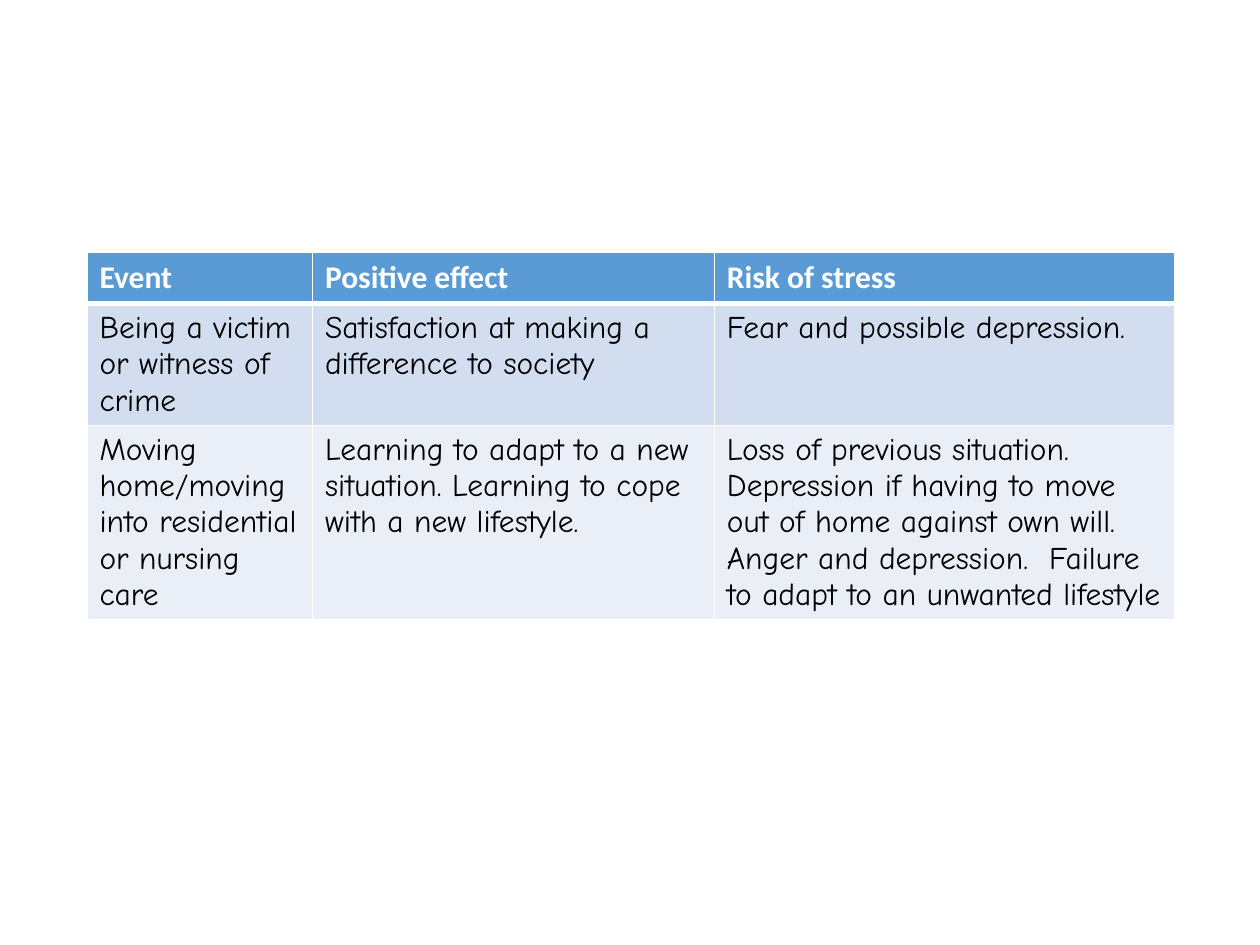
from lxml import etree
from pptx import Presentation, util as u
from pptx.dml.color import RGBColor
from pptx.oxml.ns import qn

HEADER_FORMAT = {"size": u.Pt(18), "name": "Calibri", "bold": True}
BODY_FORMAT = {"size": u.Pt(18), "name": "Comic Neue", "bold": False}
ROW_FILLS = ["5B9BD5", "D2DEEF", "EAEFF7"]
COLUMN_WIDTHS = [1.79, 3.19, 3.65]
EVENTS = [
    ["Event", "Positive effect", "Risk of stress"],
    ["Being a victim or witness of crime",
     "Satisfaction at making a difference to society",
     "Fear and possible depression."],
    ["Moving home/moving into residential or nursing care",
     "Learning to adapt to a new situation. Learning to cope with a new lifestyle.",
     "Loss of previous situation. Depression if having to move out of home against own will.\n"
     "Anger and depression.  Failure to adapt to an unwanted lifestyle"],
]


def paint(color_format, hex_color):
    """Fill a fill format with a solid colour."""
    color_format.solid()
    color_format.fore_color.rgb = RGBColor.from_string(hex_color)


def add_borders(cell, widths, hex_color="FFFFFF"):
    """Give the cell solid borders, with widths in points keyed by side."""
    properties = cell._tc.get_or_add_tcPr()
    for position, (side, width) in enumerate(widths.items()):
        border = etree.Element(qn(f"a:ln{side}"), w=str(u.Pt(width)))
        solid = etree.SubElement(border, qn("a:solidFill"))
        etree.SubElement(solid, qn("a:srgbClr"), val=hex_color)
        properties.insert(position, border)


def format_cell(cell, wording, row):
    """Write and style one cell according to its row."""
    cell.text = wording
    paint(cell.fill, ROW_FILLS[row])
    add_borders(cell, {"L": 1, "R": 1, "T": 3 if row == 1 else 1, "B": 3 if row == 0 else 1})
    for paragraph in cell.text_frame.paragraphs:
        font = paragraph.runs[0].font
        for attribute, value in (BODY_FORMAT if row else HEADER_FORMAT).items():
            setattr(font, attribute, value)
        paint(font.fill, "000000" if row else "FFFFFF")


def add_event_table(slide, left, top, row_height):
    """Place the table of life events and their effects."""
    events = slide.shapes.add_table(
        len(EVENTS), len(COLUMN_WIDTHS), left, top,
        u.Inches(sum(COLUMN_WIDTHS)), row_height * len(EVENTS)).table
    for column, width in zip(events.columns, COLUMN_WIDTHS):
        column.width = u.Inches(width)
    for row, wordings in enumerate(EVENTS):
        events.rows[row].height = row_height
        for column, wording in enumerate(wordings):
            format_cell(events.cell(row, column), wording, row)


def main():
    """Build and save the presentation."""
    deck = Presentation()
    deck.slide_width, deck.slide_height = u.Inches(10), u.Inches(7.5)
    slide = deck.slides.add_slide(deck.slide_layouts[6])
    paint(slide.background.fill, "FFFFFF")
    add_event_table(slide, u.Inches(0.69), u.Inches(2), u.Inches(0.41))
    deck.save("out.pptx")


if __name__ == "__main__":
    main()
